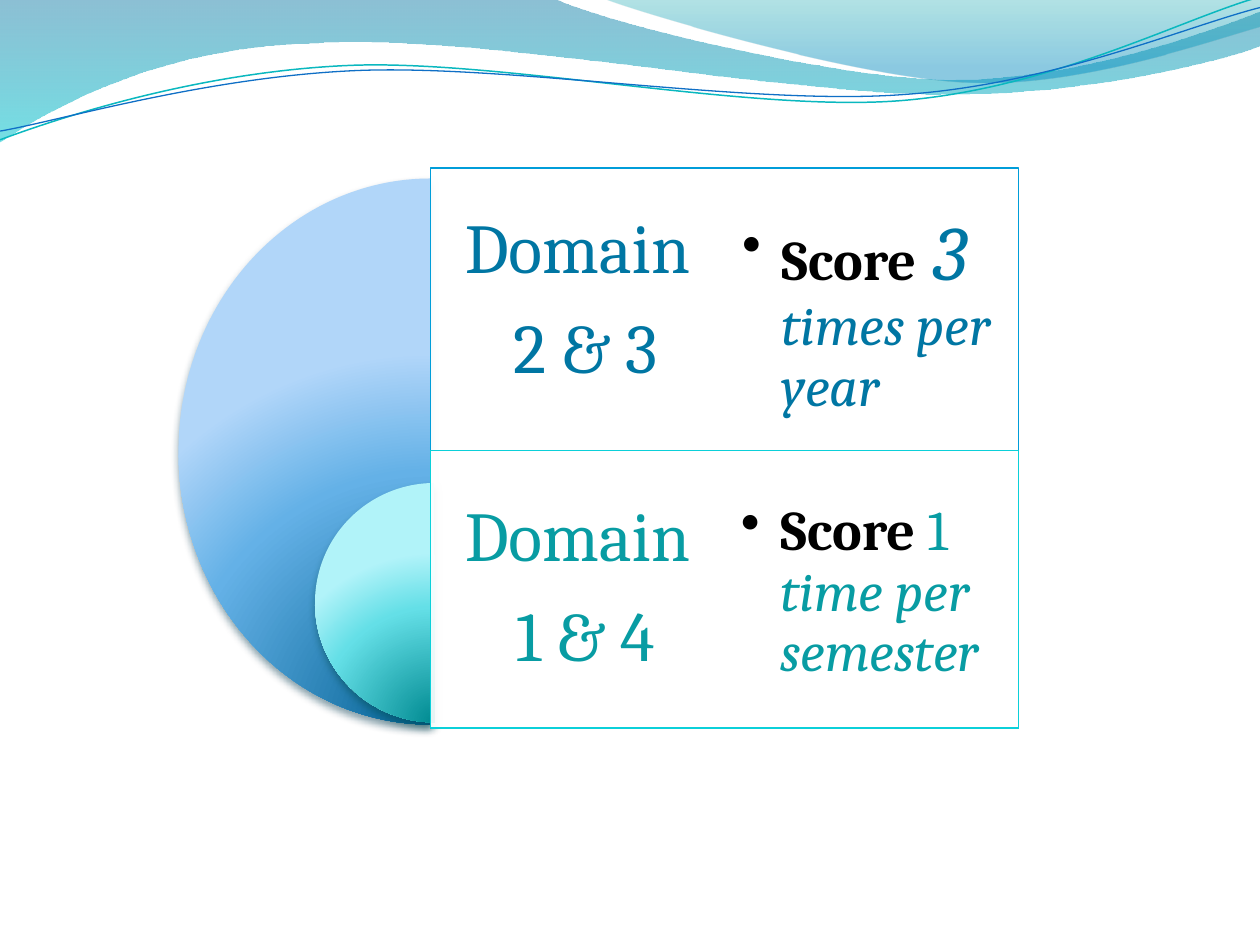
import dataclasses
import math
import pptx
import pptx.dml.color
import pptx.enum.shapes
import pptx.enum.text
import pptx.oxml
import pptx.oxml.ns
import pptx.util


@dataclasses.dataclass(frozen=True)
class Theme:
    """Colours, font and type sizes of the slide."""
    font: str = "Cambria"
    heading: int = 40
    detail: int = 32
    large: int = 44
    ink: str = "000000"
    paper: str = "FFFFFF"
    blue: str = "0076A3"
    blue_line: str = "009DD9"
    blue_shadow: str = "00374C"
    blue_stops: tuple = ((0, "006091", 100), (68, "64B1E7", 100), (100, "B1D6F9", 100))
    teal: str = "089CA3"
    teal_line: str = "0BD0D9"
    teal_shadow: str = "024B4E"
    teal_stops: tuple = ((0, "008A91", 100), (68, "64DFE7", 100), (100, "B1F3F9", 100))
    wave_stops: tuple = ((0, "0074A1", 45), (100, "00C6CF", 55))
    wing_stops: tuple = ((0, "00A1A9", 30), (80, "008BBF", 45))
    strand_teal: str = "0AB8BF"
    strand_blue: str = "0F6FC6"


THEME = Theme()
LINEAR = '<a:lin ang="5400000" scaled="0"/>'
RADIAL = ('<a:path path="circle"><a:fillToRect l="50000" t="130000" '
          'r="50000" b="-30000"/></a:path>')
WAVE = [(0, 0), (316.8, -0.7),
        (342.7, 12.2, 478.1, 45.4, 545.8, 45.4), (614.2, 45.4, 689.8, 18.7, 720, 6.5),
        (720.7, 25.9), (707.8, 31.7, 626.4, 54.7, 537.1, 54),
        (447.8, 54, 275, 20.2, 185, 24.5), (92.9, 25.9, 33.1, 59.8, -0.7, 81.4)]
WING = [(344.9, -0.7), (366.5, 7.9, 491, 44.6, 553.7, 46.8),
        (616.3, 49.7, 691.9, 23, 720, 15.1), (720, 0)]
TEAL_STRAND = [(0, 79.9), (34.6, 67, 113.8, 41, 199.4, 37.4),
               (284.4, 33.8, 427, 64.1, 513.4, 57.6), (599.8, 51.1, 675.4, 10.8, 718.6, -1.4)]
BLUE_STRAND = [(0, 74.9), (33.8, 69.1, 118.1, 43.9, 203.8, 40.3),
               (290.2, 36.7, 429.8, 60.5, 516.2, 54), (601.9, 48.2, 677.5, 15.1, 720, 4.3)]


def rgb(colour):
    """Return a colour object for a hex string."""
    return pptx.dml.color.RGBColor.from_string(colour)


def points(*lengths):
    """Convert numbers of points to lengths."""
    return [pptx.util.Pt(length) for length in lengths]


def apply(target, values):
    """Set each attribute named in a dict."""
    for name, value in values.items():
        setattr(target, name, value)


def drawing(markup):
    """Turn drawing markup into an element."""
    tag_end = min(markup.index(mark) for mark in " />" if mark in markup)
    return pptx.oxml.parse_xml(
        f"{markup[:tag_end]} {pptx.oxml.ns.nsdecls('a')}{markup[tag_end:]}")


def fill_gradient(shape, stops, direction):
    """Fill a shape with a gradient of position, colour and opacity stops."""
    shape.fill.background()
    marks = "".join(
        f'<a:gs pos="{place * 1000}"><a:srgbClr val="{colour}">'
        f'<a:alpha val="{opacity * 1000}"/></a:srgbClr></a:gs>'
        for place, colour, opacity in stops)
    properties = shape._element.spPr
    empty = properties.find(pptx.oxml.ns.qn("a:noFill"))
    properties.replace(empty, drawing(
        f'<a:gradFill rotWithShape="1"><a:gsLst>{marks}</a:gsLst>{direction}</a:gradFill>'))


def set_line(shape, colour, width):
    """Give a shape an outline."""
    shape.line.color.rgb = rgb(colour)
    shape.line.width = pptx.util.Pt(width)


def turn(part, angle, centre=(359.3, 41.4)):
    """Turn the coordinate pairs of an outline part about the header centre."""
    cos, sin = math.cos(math.radians(angle)), math.sin(math.radians(angle))
    turned = []
    for x, y in zip(part[::2], part[1::2]):
        across, down = x - centre[0], y - centre[1]
        turned += [centre[0] + across * cos - down * sin, centre[1] + across * sin + down * cos]
    return turned


def add_outline(page, outline, close, angle=0):
    """Draw a freeform of corners and cubic curves."""
    parts = [points(*turn(part, -angle)) for part in outline]
    builder = page.shapes.build_freeform(*parts[0])
    builder.add_line_segments([part[-2:] for part in parts[1:]], close=close)
    shape = builder.convert_to_shape()
    segments = list(shape._element.iter(pptx.oxml.ns.qn("a:lnTo")))
    for part, segment in zip(parts[1:], segments):
        if len(part) == 6:
            spots = "".join(f'<a:pt x="{x - shape.left}" y="{y - shape.top}"/>'
                            for x, y in zip(part[::2], part[1::2]))
            curve = drawing(f"<a:cubicBezTo>{spots}</a:cubicBezTo>")
            segment.getparent().replace(segment, curve)
    shape.rotation = angle
    shape.shadow.inherit = False
    return shape


def add_band(page, outline, stops):
    """Add a translucent band to the header."""
    shape = add_outline(page, outline, True)
    fill_gradient(shape, stops, LINEAR)
    shape.line.fill.background()


def add_strand(page, outline, colour, width):
    """Add a thin curved line to the header."""
    shape = add_outline(page, outline, False, -2.7)
    shape.fill.background()
    set_line(shape, colour, width)


def add_half_disc(page, place, stops, shadow):
    """Add a shaded left half disc."""
    shape = page.shapes.add_shape(pptx.enum.shapes.MSO_SHAPE.PIE, *points(*place))
    for index, value in enumerate((54, 162)):
        shape.adjustments[index] = value
    fill_gradient(shape, stops, RADIAL)
    shape.line.fill.background()
    shape.shadow.inherit = False
    effects = shape._element.spPr.find(pptx.oxml.ns.qn("a:effectLst"))
    effects.append(drawing(
        f'<a:outerShdw blurRad="{pptx.util.Pt(4.5)}" dist="{pptx.util.Pt(3)}" dir="5400000" '
        f'rotWithShape="0"><a:srgbClr val="{shadow}"><a:alpha val="48000"/>'
        '</a:srgbClr></a:outerShdw>'))


def add_panel(page, place, colour):
    """Add a nearly opaque outlined panel."""
    shape = page.shapes.add_shape(pptx.enum.shapes.MSO_SHAPE.RECTANGLE, *points(*place))
    shape.shadow.inherit = False
    shape.fill.solid()
    shape.fill.fore_color.rgb = rgb(THEME.paper)
    paint = next(shape._element.spPr.iter(pptx.oxml.ns.qn("a:srgbClr")))
    paint.append(drawing('<a:alpha val="90000"/>'))
    set_line(shape, colour, 0.75)


def add_text(page, place, inset, paragraphs, after, bullet=False, drop=0):
    """Add a text box whose paragraphs are lists of text, colour and font values."""
    box = page.shapes.add_textbox(*points(*place))
    frame = box.text_frame
    margins = {f"margin_{side}": pptx.util.Pt(inset)
               for side in ("left", "right", "bottom")}
    apply(frame, {"word_wrap": True, "margin_top": pptx.util.Pt(inset + drop),
                  "vertical_anchor": pptx.enum.text.MSO_ANCHOR.MIDDLE, **margins})
    align = pptx.enum.text.PP_ALIGN.LEFT if bullet else pptx.enum.text.PP_ALIGN.CENTER
    for index, spans in enumerate(paragraphs):
        para = frame.paragraphs[0] if index == 0 else frame.add_paragraph()
        apply(para, {"alignment": align, "line_spacing": 0.9, "level": int(bullet),
                     "space_after": pptx.util.Pt(after)})
        if bullet:
            properties = para._p.get_or_add_pPr()
            properties.set("marL", str(pptx.util.Pt(22.5)))
            properties.set("indent", str(pptx.util.Pt(-22.5)))
            properties.append(drawing('<a:buChar char="••"/>'))
        for text, colour, size, style in spans:
            span = para.add_run()
            span.text = text
            apply(span.font, {"name": THEME.font, "size": pptx.util.Pt(size), **style})
            span.font.color.rgb = rgb(colour)


def main():
    """Build the slide and save it."""
    deck = pptx.Presentation()
    apply(deck, {"slide_width": pptx.util.Pt(720), "slide_height": pptx.util.Pt(540)})
    page = deck.slides.add_slide(deck.slide_layouts[6])
    add_band(page, WAVE, THEME.wave_stops)
    add_band(page, WING, THEME.wing_stops)
    add_strand(page, TEAL_STRAND, THEME.strand_teal, 0.85)
    add_strand(page, BLUE_STRAND, THEME.strand_blue, 0.75)

    bold, italic = {"bold": True}, {"italic": True}
    first = [("Score", THEME.ink, THEME.detail, bold), (" ", THEME.ink, THEME.large, italic),
             ("3 ", THEME.blue, THEME.large, italic),
             ("times per year", THEME.blue, THEME.detail, italic)]
    second = [("Score ", THEME.ink, THEME.detail, bold), ("1 ", THEME.teal, THEME.detail, {}),
              ("time per semester", THEME.teal, THEME.detail, italic)]
    rows = [
        ((102, 102, 288, 312), THEME.blue_stops, THEME.blue_shadow, 96, 320, 152,
         THEME.blue_line, THEME.blue, " 2 & 3"),
        ((180, 276, 136.8, 136.8), THEME.teal_stops, THEME.teal_shadow, 257.5, 158.5, 158.5,
         THEME.teal_line, THEME.teal, " 1 & 4")]
    for disc, stops, shadow, top, height, label_height, line, colour, domain in rows:
        add_half_disc(page, disc, stops, shadow)
        add_panel(page, (246, top, 336, height), line)
        label = [[(text, colour, THEME.heading, {})] for text in ("Domain", domain)]
        add_text(page, (246, top, 168, label_height), 12, label, 14)
    add_text(page, (414, 112.3, 168, 136.8), 10, [first], 4.8, bullet=True)
    add_text(page, (414, 226, 168, 181.5), 9.4, [second], 4.8, bullet=True, drop=44)
    deck.save("out.pptx")


if __name__ == "__main__":
    main()
